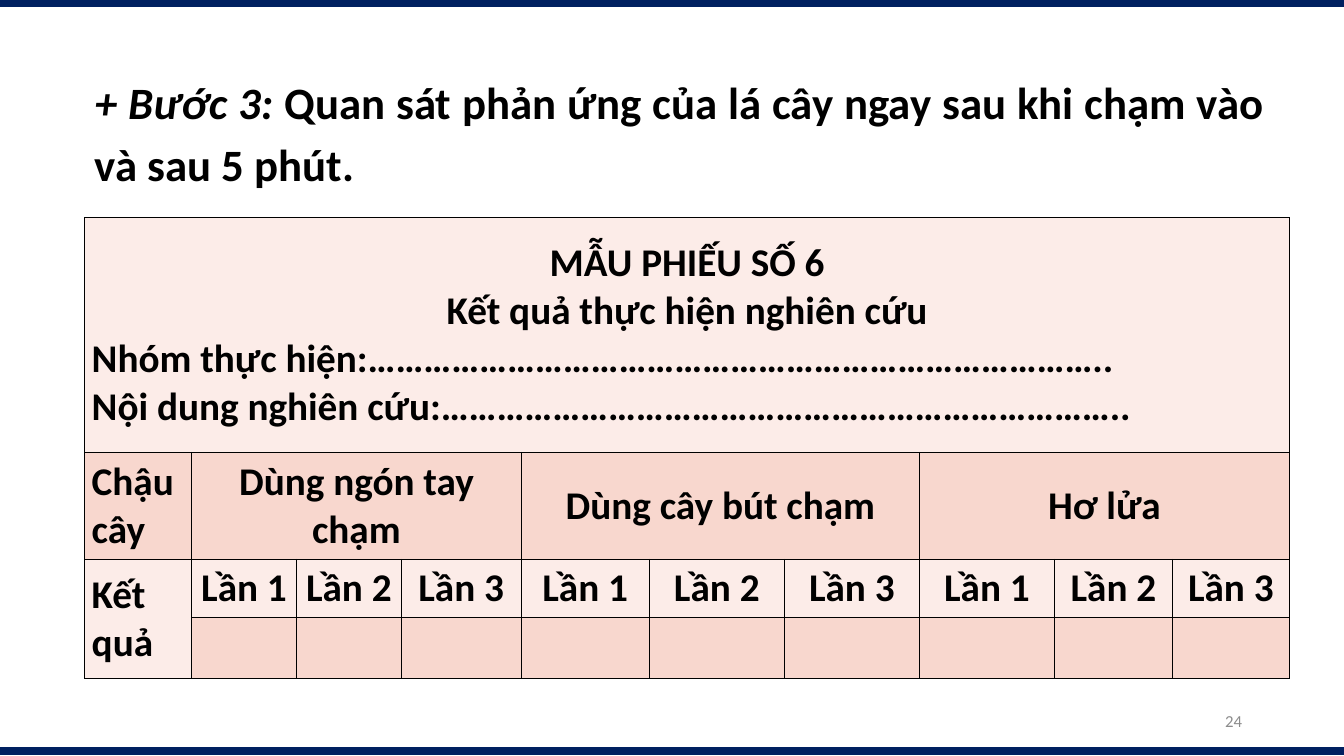
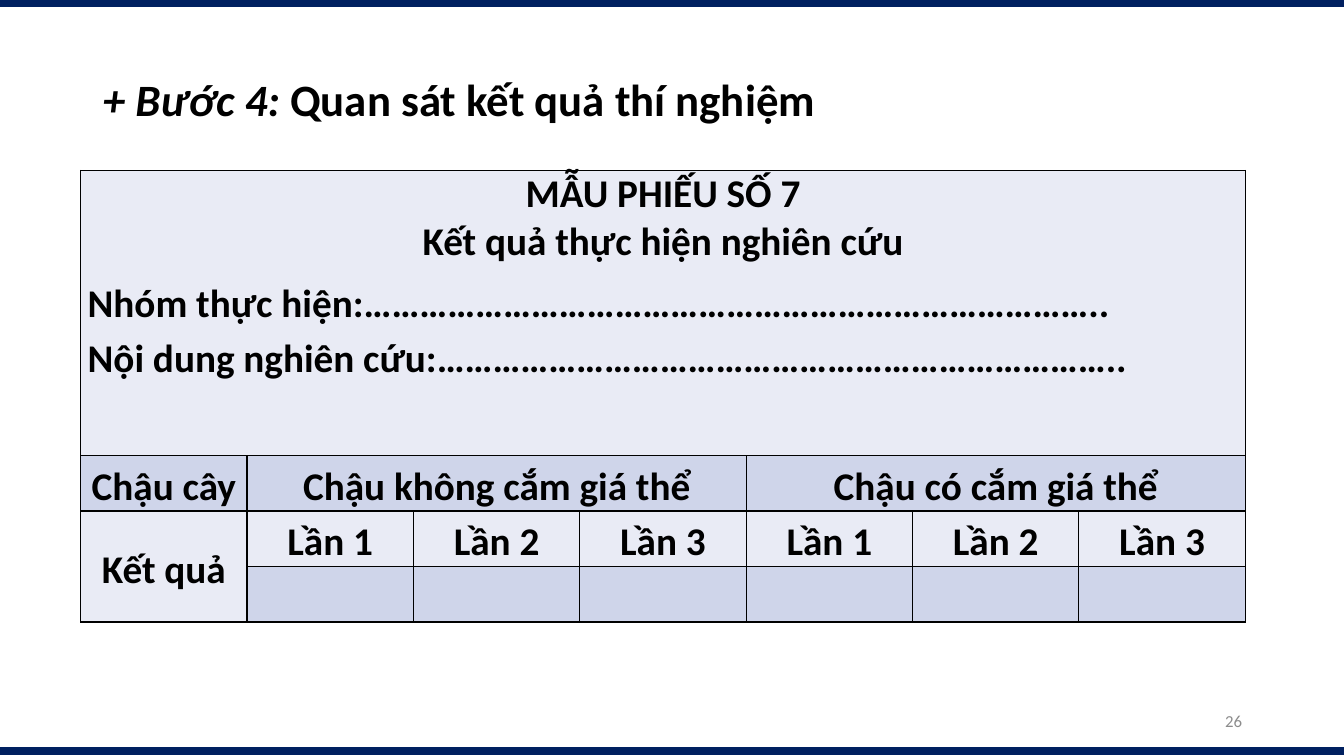
from lxml import etree
from pptx import Presentation
from pptx.dml.color import RGBColor
from pptx.enum.shapes import MSO_CONNECTOR, PP_PLACEHOLDER
from pptx.enum.text import MSO_ANCHOR, MSO_AUTO_SIZE, PP_ALIGN
from pptx.oxml.ns import qn
from pptx.util import Inches, Pt

STRAIGHT = MSO_CONNECTOR.STRAIGHT
SLIDE_NUMBER = PP_PLACEHOLDER.SLIDE_NUMBER
TOP, MIDDLE = MSO_ANCHOR.TOP, MSO_ANCHOR.MIDDLE
LEFT, CENTER = PP_ALIGN.LEFT, PP_ALIGN.CENTER
RIGHT, JUSTIFY = PP_ALIGN.RIGHT, PP_ALIGN.JUSTIFY
NO_AUTOFIT = MSO_AUTO_SIZE.NONE

FONT = "Calibri"
BLACK, NAVY, GREY = "000000", "002060", "8C8C8C"
TITLE_SIZE, FORM_SIZE, NUMBER_SIZE = 32, 28, 12
BAND_YS = (7.45, 0.03)
NUMBER_BOX = (9.42, 6.95, 3, 0.4)

# Line spacing, points before, points after
PLAIN = (1, 0, 0)
AIRY = (1.15, 5, 0)
LAST_FIELD = (1.15, 0, 12)

FORM_SUBTITLE = "Kết quả thực hiện nghiên cứu"
GROUP_FIELD = "Nhóm thực hiện:" + "…" * 26 + ".."
TOPIC_FIELD = "Nội dung nghiên cứu:" + "…" * 24 + ".."
POT_LABEL, RESULT_LABEL = "Chậu cây", "Kết quả"
TRIALS = ("Lần 1", "Lần 2", "Lần 3")

STEPS = [
    {
        "number": "24",
        "step": "+ Bước 3: ",
        "task": "Quan sát phản ứng của lá cây ngay sau khi chạm vào và sau 5 phút.",
        "title_box": (0.84, 0.61, 11.81, 1.34),
        "title_align": JUSTIFY,
        "title_spacing": AIRY,
        "form_title": "MẪU PHIẾU SỐ 6",
        "treatments": ("Dùng ngón tay chạm", "Dùng cây bút chạm", "Hơ lửa"),
        "origin": (0.84, 2.16),
        "columns": (1.06, 1.04, 1.04, 1.19, 1.27, 1.34, 1.34, 1.34, 1.17, 1.16),
        "rows": (2.33, 1.06, 0.58, 0.6),
        "fills": ("FCECE8", "F8D7CE"),
        "label_align": JUSTIFY,
        "anchor": MIDDLE,
        "field_spacings": (PLAIN, PLAIN),
        "cell_spacing": PLAIN,
    },
    {
        "number": "26",
        "step": "+ Bước 4: ",
        "task": "Quan sát kết quả thí nghiệm",
        "title_box": (0.92, 0.66, 7.93, 0.64),
        "title_align": LEFT,
        "title_spacing": PLAIN,
        "form_title": "MẪU PHIẾU SỐ 7",
        "treatments": ("Chậu không cắm giá thể", "Chậu có cắm giá thể"),
        "origin": (0.8, 1.69),
        "columns": (1.65,) * 7,
        "rows": (2.83, 0.55, 0.55, 0.55),
        "fills": ("E9EBF5", "CFD5EA"),
        "label_align": CENTER,
        "anchor": TOP,
        "field_spacings": (AIRY, LAST_FIELD),
        "cell_spacing": AIRY,
    },
]


def rgb(colour):
    return RGBColor.from_string(colour)


def inches(lengths):
    return [Inches(length) for length in lengths]


def style(paragraph, size, colour, align, spacing=PLAIN, bold=True):
    paragraph.alignment = align
    paragraph.line_spacing = spacing[0]
    paragraph.space_before, paragraph.space_after = Pt(spacing[1]), Pt(spacing[2])
    font = paragraph.font
    font.name, font.size, font.bold = FONT, Pt(size), bold
    font.color.rgb = rgb(colour)


def place(placeholder, box, anchor):
    (placeholder.left, placeholder.top,
     placeholder.width, placeholder.height) = inches(box)
    frame = placeholder.text_frame
    frame.word_wrap = True
    frame.auto_size = NO_AUTOFIT
    frame.vertical_anchor = anchor
    return frame.paragraphs[0]


def add_bands(slide, layout):
    """Draw the edge bands and move them to the layout, which all slides share."""
    for y in BAND_YS:
        band = slide.shapes.add_connector(
            STRAIGHT, *inches((-0.05, y, 13.35, y)))
        band.line.color.rgb = rgb(NAVY)
        band.line.width = Pt(6)
        etree.SubElement(band.element.spPr, qn("a:effectLst"))
        layout.shapes.element.append(band.element)


def add_title(slide, step):
    paragraph = place(slide.shapes.title, step["title_box"], TOP)
    style(paragraph, TITLE_SIZE, BLACK, step["title_align"], step["title_spacing"])
    for text, italic in ((step["step"], True), (step["task"], False)):
        run = paragraph.add_run()
        run.text, run.font.italic = text, italic


def add_number(slide, number):
    source = next(holder for holder in slide.slide_layout.placeholders
                  if holder.placeholder_format.type == SLIDE_NUMBER)
    slide.shapes.clone_placeholder(source)
    holder = slide.placeholders[source.placeholder_format.idx]
    paragraph = place(holder, NUMBER_BOX, MIDDLE)
    paragraph.text = number
    style(paragraph, NUMBER_SIZE, GREY, RIGHT, bold=False)


def format_cell(cell, fill):
    """Set the margins, the black border and the fill."""
    cell.margin_left = cell.margin_right = Inches(0.07)
    cell.margin_top = cell.margin_bottom = 0
    properties = cell._tc.get_or_add_tcPr()
    for side in ("a:lnL", "a:lnR", "a:lnT", "a:lnB"):
        border = etree.SubElement(properties, qn(side), w=str(Pt(1)))
        solid = etree.SubElement(border, qn("a:solidFill"))
        etree.SubElement(solid, qn("a:srgbClr"), val=BLACK)
    cell.fill.solid()
    cell.fill.fore_color.rgb = rgb(fill)


def write(cell, lines, anchor):
    """Fill a cell with (text, alignment, spacing) lines."""
    cell.vertical_anchor = anchor
    frame = cell.text_frame
    for index, (text, align, spacing) in enumerate(lines):
        paragraph = frame.add_paragraph() if index else frame.paragraphs[0]
        paragraph.text = text
        style(paragraph, FORM_SIZE, BLACK, align, spacing)


def add_form(slide, step):
    columns, rows = step["columns"], step["rows"]
    table = slide.shapes.add_table(
        len(rows), len(columns),
        *inches((*step["origin"], sum(columns), sum(rows)))).table
    table.first_row = table.horz_banding = False
    for column, width in zip(table.columns, columns):
        column.width = Inches(width)
    for index, (row, height) in enumerate(zip(table.rows, rows)):
        row.height = Inches(height)
        for cell in row.cells:
            format_cell(cell, step["fills"][index % 2])

    spacing, anchor = step["cell_spacing"], step["anchor"]
    heading = table.cell(0, 0)
    heading.merge(table.cell(0, len(columns) - 1))
    group_spacing, topic_spacing = step["field_spacings"]
    write(heading, [
        (step["form_title"], CENTER, PLAIN),
        (FORM_SUBTITLE, CENTER, PLAIN),
        (GROUP_FIELD, JUSTIFY, group_spacing),
        (TOPIC_FIELD, JUSTIFY, topic_spacing),
    ], anchor)

    table.cell(2, 0).merge(table.cell(3, 0))
    for row, label in ((1, POT_LABEL), (2, RESULT_LABEL)):
        write(table.cell(row, 0), [(label, step["label_align"], spacing)], MIDDLE)

    for group, treatment in enumerate(step["treatments"]):
        first = 1 + group * len(TRIALS)
        header = table.cell(1, first)
        header.merge(table.cell(1, first + len(TRIALS) - 1))
        write(header, [(treatment, CENTER, spacing)], MIDDLE)
        for column, trial in enumerate(TRIALS, first):
            write(table.cell(2, column), [(trial, CENTER, spacing)], anchor)


def main():
    deck = Presentation()
    deck.slide_width, deck.slide_height = Inches(13.33), Inches(7.5)
    layout = deck.slide_layouts.get_by_name("Title Only")
    for index, step in enumerate(STEPS):
        slide = deck.slides.add_slide(layout)
        if index == 0:
            add_bands(slide, layout)
        add_form(slide, step)
        add_title(slide, step)
        add_number(slide, step["number"])
    deck.save("out.pptx")


if __name__ == "__main__":
    main()
